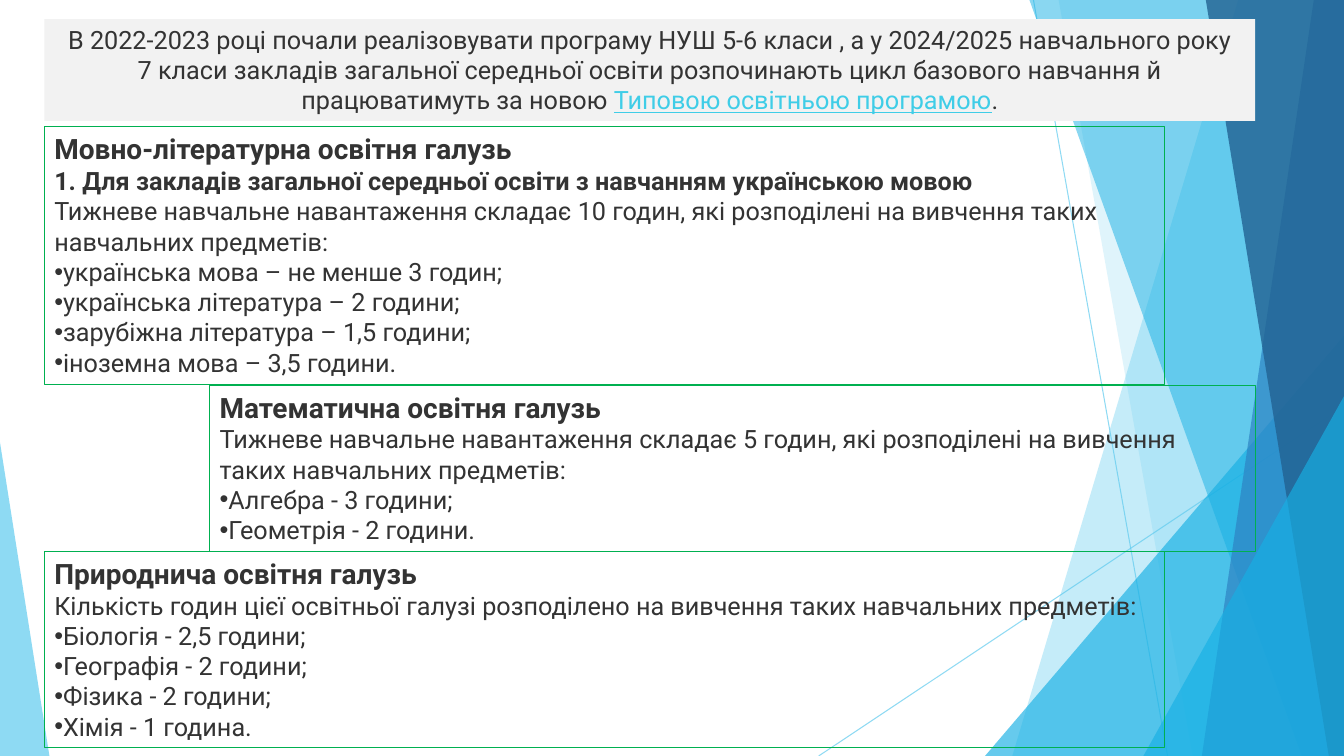
import pptx
import pptx.util
import pptx.dml.color
import pptx.enum.shapes
import pptx.enum.text
import pptx.oxml
import pptx.oxml.ns
import lxml.etree

Inches = pptx.util.Inches
Pt = pptx.util.Pt
KIND = pptx.enum.shapes.MSO_SHAPE
ALIGN = pptx.enum.text.PP_ALIGN
qn = pptx.oxml.ns.qn

W, H = 13.33, 7.5
FONT = "Roboto"
HEX = {
    "sky": "5FCBEF", "azure": "17B0E4", "blue": "2E83C3", "navy": "226292",
    "panel": "F2F2F2", "frame": "00B050", "text": "333333", "link": "3FCDE7",
}

# Facet bands: top-left x, bottom-left x, colour, opacity
BACK = [(12.28, 10.04, "sky", 36), (10.5, 11.83, "sky", 20)]
FRONT = [
    (10.21, 12.91, "azure", 50),
    (13.03, 11.92, "blue", 70),
    (11.96, 13.18, "navy", 80),
]

# Subject areas: box, title, bold note, intro, bullets
AREAS = [
    ((0.44, 1.26, 11.11, 2.56), "Мовно-літературна освітня галузь",
     "1. Для закладів загальної середньої освіти з навчанням українською мовою",
     "Тижневе навчальне навантаження складає 10 годин, які розподілені "
     "на вивчення таких навчальних предметів:",
     ["українська мова – не менше 3 годин;",
      "українська література – 2 години;",
      "зарубіжна література – 1,5 години;",
      "іноземна мова – 3,5 години."]),
    ((2.08, 3.82, 10.37, 1.65), "Математична освітня галузь", None,
     "Тижневе навчальне навантаження складає 5 годин, які розподілені "
     "на вивчення таких навчальних предметів:",
     ["Алгебра - 3 години;", "Геометрія - 2 години."]),
    ((0.44, 5.47, 11.11, 1.95), "Природнича освітня галузь", None,
     "Кількість годин цієї освітньої галузі розподілено на вивчення "
     "таких навчальних предметів:",
     ["Біологія - 2,5 години;", "Географія - 2 години;",
      "Фізика - 2 години;", "Хімія - 1 година."]),
]


def tint(color):
    return pptx.dml.color.RGBColor.from_string(HEX[color])


def fade(part, alpha):
    """Set the opacity, in percent, of the solid colour inside part."""
    rgb = next(part.iter(qn("a:srgbClr")))
    lxml.etree.SubElement(rgb, qn("a:alpha")).set("val", str(alpha * 1000))


def paint(shape, color, alpha):
    shape.shadow.inherit = False
    shape.fill.solid()
    shape.fill.fore_color.rgb = tint(color)
    shape.line.fill.background()
    fade(shape.fill._xPr, alpha)


def add_ray(slide, start, end):
    ends = [Inches(n) for n in start + end]
    ray = slide.shapes.add_connector(
        pptx.enum.shapes.MSO_CONNECTOR.STRAIGHT, *ends)
    ray.line.color.rgb = tint("sky")
    ray.line.width = Pt(0.75)
    props = ray._element.spPr
    fade(props, 70)
    lxml.etree.SubElement(props, qn("a:effectLst"))


def add_band(slide, top, base, color, alpha):
    """Draw a slanted band that runs to the right edge of the slide."""
    build = slide.shapes.build_freeform(Inches(top), 0)
    build.add_line_segments(
        [(Inches(x), Inches(y)) for x, y in [(W, 0), (W, H), (base, H)]])
    paint(build.convert_to_shape(), color, alpha)


def add_peak(slide, left, top, width, tip, color, alpha):
    """Draw a triangle that stands on the bottom edge of the slide."""
    peak = slide.shapes.add_shape(
        KIND.ISOSCELES_TRIANGLE, Inches(left), Inches(top),
        Inches(width), Inches(H - top))
    peak.adjustments[0] = tip
    paint(peak, color, alpha)


def add_box(slide, place):
    box = slide.shapes.add_shape(KIND.RECTANGLE, *[Inches(n) for n in place])
    box.shadow.inherit = False
    box.text_frame.word_wrap = True
    box.text_frame.vertical_anchor = pptx.enum.text.MSO_ANCHOR.TOP
    return box


def style(run, size=18, bold=False, color="text"):
    run.font.name = FONT
    run.font.size = Pt(size)
    run.font.bold = bold
    run.font.color.rgb = tint(color)


def add_bullet(para):
    props = para._p.get_or_add_pPr()
    props.set("marL", "0")
    props.set("indent", "0")
    face = lxml.etree.SubElement(props, qn("a:buFont"))
    face.set("typeface", "Arial")
    lxml.etree.SubElement(props, qn("a:buChar")).set("char", "•")


def add_intro(slide):
    box = add_box(slide, (0.44, 0.19, 12.01, 1.01))
    box.fill.solid()
    box.fill.fore_color.rgb = tint("panel")
    box.line.fill.background()
    para = box.text_frame.paragraphs[0]
    para.text = ("В 2022-2023 році почали реалізовувати програму НУШ 5-6 класи , "
                 "а у 2024/2025 навчального року\v"
                 "7 класи закладів загальної середньої освіти розпочинають "
                 "цикл базового навчання й працюватимуть за новою ")
    para.alignment = ALIGN.CENTER
    link = para.add_run()
    link.text = "Типовою освітньою програмою"
    para.add_run().text = "."
    for run in para.runs:
        style(run)
    style(link, color="link")
    link.font.underline = True


def add_area(slide, place, title, note, intro, items):
    box = add_box(slide, place)
    box.fill.background()
    box.line.color.rgb = tint("frame")
    box.line.width = Pt(0.75)
    rows = [title] + ([note] if note else []) + [intro] + items
    frame = box.text_frame
    frame.text = "\n".join(rows)
    first = len(rows) - len(items)
    for i, para in enumerate(frame.paragraphs):
        para.alignment = ALIGN.LEFT
        style(para.runs[0], 20 if i == 0 else 18, bold=i < first - 1)
        if i >= first:
            add_bullet(para)


def add_facets(slide):
    add_ray(slide, (10.25, 0), (11.58, H))
    add_ray(slide, (W, 4.03), (8.12, H))
    for band in BACK:
        add_band(slide, *band)
    add_peak(slide, 9.77, 3.33, 3.56, 1, "azure", 66)
    for band in FRONT:
        add_band(slide, *band)
    add_peak(slide, 11.34, 3.93, 1.99, 1, "azure", 66)
    add_peak(slide, 0, 4.39, 0.49, 0, "sky", 70)


def main():
    deck = pptx.Presentation()
    deck.slide_width, deck.slide_height = Inches(W), Inches(H)
    slide = deck.slides.add_slide(deck.slide_layouts[6])
    add_facets(slide)
    add_intro(slide)
    for area in AREAS:
        add_area(slide, *area)
    deck.save("out.pptx")


if __name__ == "__main__":
    main()
